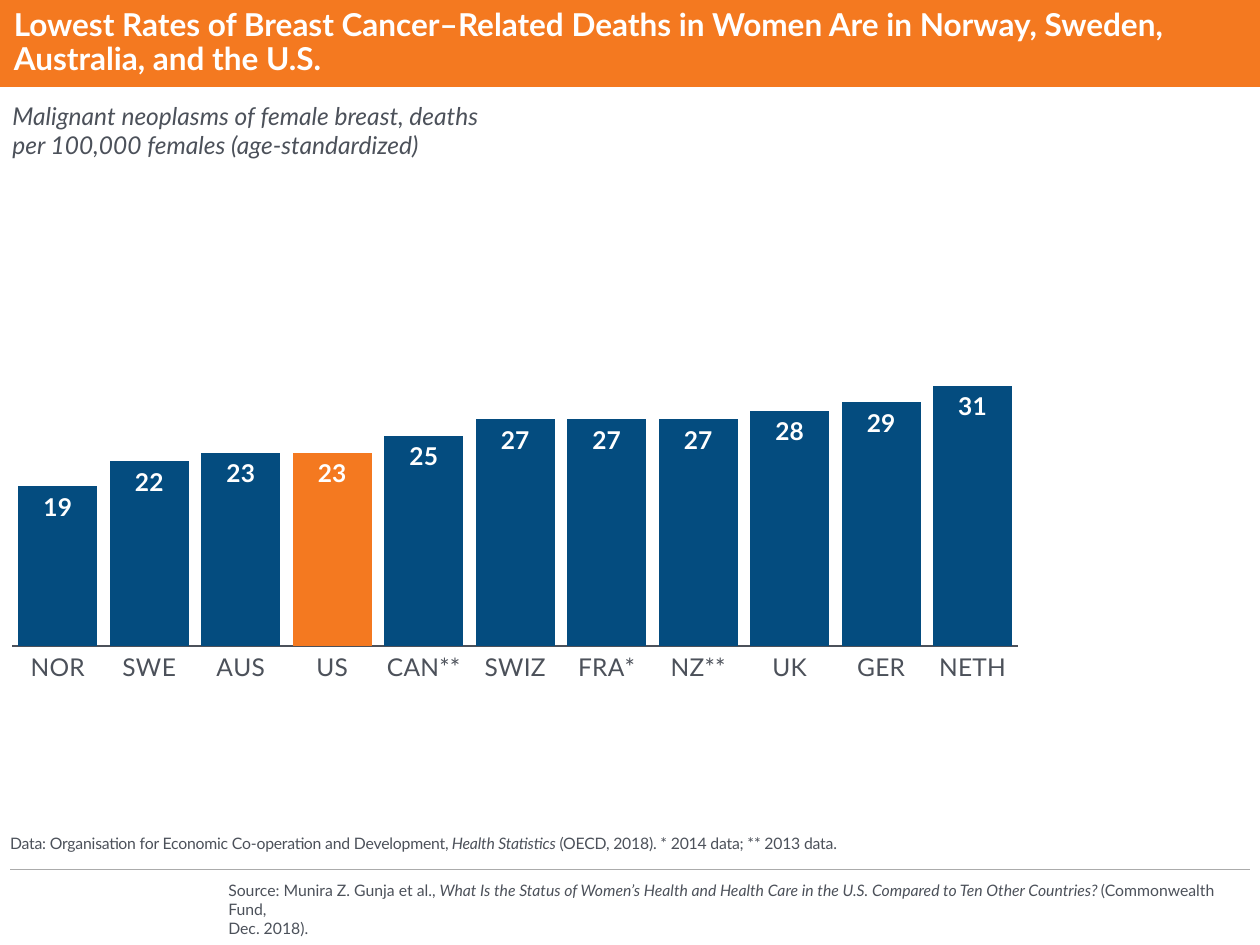
import pptx
import pptx.chart.data
import pptx.dml.color
import pptx.enum.chart
import pptx.enum.shapes
import pptx.enum.text
import pptx.oxml
import pptx.util
from lxml import etree

FONT = "Lato"
ORANGE, BLUE, GREY, RULE_GREY, WHITE = "F47920", "044C7F", "4C515A", "ABABAB", "FFFFFF"
WIDTH, HEIGHT = pptx.util.Inches(10), pptx.util.Inches(7.5)
COLUMN, ROW = WIDTH / 100, HEIGHT / 75
ANCHOR = pptx.enum.text.MSO_ANCHOR
DEATH_RATES = {
    "NOR": 19, "SWE": 22, "AUS": 23, "US": 23, "CAN**": 25, "SWIZ": 27,
    "FRA*": 27, "NZ**": 27, "UK": 28, "GER": 29, "NETH": 31,
}


def rgb(code):
    """Turn a hex string into a colour."""
    return pptx.dml.color.RGBColor.from_string(code)


def grid(left, top, width, height):
    """Turn columns and rows of the slide grid into slide lengths."""
    return tuple(round(n * unit) for n, unit in
                 zip((left, top, width, height), (COLUMN, ROW, COLUMN, ROW)))


def style(font, size, color, bold=False, italic=False):
    """Set the look of a font."""
    font.name, font.size = FONT, pptx.util.Pt(size)
    font.bold, font.italic = bold, italic
    font.color.rgb = rgb(color)


def add_text(slide, box, pieces, size, color, anchor=ANCHOR.MIDDLE, bold=False, inset=0):
    """Place one paragraph of (text, italic) pieces and return its box and paragraph."""
    text_box = slide.shapes.add_textbox(*box)
    frame = text_box.text_frame
    frame.word_wrap = True
    frame.vertical_anchor = anchor
    frame.margin_left = frame.margin_right = pptx.util.Inches(inset)
    frame.margin_top = frame.margin_bottom = pptx.util.Inches(inset / 2)
    paragraph = frame.paragraphs[0]
    for text, italic in pieces:
        for number, line in enumerate(text.split("\n")):
            if number:
                paragraph.add_line_break()
            run = paragraph.add_run()
            run.text = line
            style(run.font, size, color, bold, italic)
    return text_box, paragraph


def add_title_band(slide, box):
    """Fill the box with the orange band and its headline."""
    left, top, width, height = box
    band = slide.shapes.add_shape(pptx.enum.shapes.MSO_SHAPE.RECTANGLE, *box)
    band.shadow.inherit = False
    band.fill.solid()
    band.fill.fore_color.rgb = rgb(ORANGE)
    band.line.fill.background()
    indent = round(width * 0.011)
    headline = ("Lowest Rates of Breast Cancer–Related Deaths in Women Are in "
                "Norway, Sweden, Australia, and the U.S.")
    _, paragraph = add_text(slide, (left + indent, top, round(width * 0.984), height),
                            [(headline, False)], 18, WHITE, bold=True)
    paragraph.line_spacing = 0.9


def add_measure(slide, box):
    """Name the measure that the chart shows."""
    measure = "Malignant neoplasms of female breast, deaths \nper 100,000 females (age-standardized)"
    text_box, _ = add_text(slide, box, [(measure, True)], 14, GREY, ANCHOR.TOP, inset=0.1)
    text_box.text_frame.auto_size = pptx.enum.text.MSO_AUTO_SIZE.SHAPE_TO_FIT_TEXT


def fix_plot_area(chart, **shares):
    """Pin the inner plot area to shares of the chart."""
    plot_area = chart._chartSpace.chart.plotArea
    for old in plot_area.findall(pptx.oxml.ns.qn("c:layout")):
        plot_area.remove(old)
    layout = etree.Element(pptx.oxml.ns.qn("c:layout"))
    manual = etree.SubElement(layout, pptx.oxml.ns.qn("c:manualLayout"))
    settings = {"layoutTarget": "inner", "xMode": "edge", "yMode": "edge", **shares}
    for tag, value in settings.items():
        etree.SubElement(manual, pptx.oxml.ns.qn(f"c:{tag}")).set("val", str(value))
    plot_area.insert(0, layout)


def add_death_chart(slide, box):
    """Chart the death rates by country with the US highlighted."""
    enums = pptx.enum.chart
    data = pptx.chart.data.CategoryChartData()
    data.categories = list(DEATH_RATES)
    data.add_series("Series 1", list(DEATH_RATES.values()))
    chart = slide.shapes.add_chart(enums.XL_CHART_TYPE.COLUMN_CLUSTERED, *box, data).chart
    chart.has_legend = chart.has_title = False
    style(chart.font, 10, GREY)
    fix_plot_area(chart, x=0.02, y=0.03, w=0.96, h=0.88)

    rates, countries = chart.value_axis, chart.category_axis
    rates.minimum_scale, rates.maximum_scale, rates.major_unit = 0, 50, 10
    rates.has_major_gridlines = rates.visible = False
    countries.major_tick_mark = enums.XL_TICK_MARK.NONE
    countries.format.line.color.rgb = rgb(GREY)
    countries.format.line.width = pptx.util.Pt(0.75)
    style(countries.tick_labels.font, 14, GREY)

    plot = chart.plots[0]
    plot.gap_width, plot.overlap, plot.vary_by_categories = 16, -27, False
    deaths = plot.series[0]
    deaths.invert_if_negative = False
    highlight = deaths.points[list(DEATH_RATES).index("US")]
    for bars, color in ((deaths, BLUE), (highlight, ORANGE)):
        bars.format.fill.solid()
        bars.format.fill.fore_color.rgb = rgb(color)
    labels = deaths.data_labels
    labels.show_value = True
    labels.number_format, labels.number_format_is_linked = "#,##0", False
    labels.position = enums.XL_LABEL_POSITION.INSIDE_END
    style(labels.font, 14, WHITE, bold=True)


def add_data_note(slide, box):
    """Write the note on the data along the bottom of the box."""
    pieces = [("Data: Organisation for Economic Co-operation and Development, ", False),
              ("Health Statistics", True),
              (" (OECD, 2018). * 2014 data; ** 2013 data.", False)]
    _, paragraph = add_text(slide, box, pieces, 9, GREY, ANCHOR.BOTTOM)
    paragraph.line_spacing = 0.9
    paragraph.space_after = pptx.util.Pt(6)
    for run in paragraph.runs:
        run.font._element.set("spc", "-10")


def add_source(slide, box):
    """Draw the rule on top of the box and the source at its right."""
    left, top, width, height = box
    rule = slide.shapes.add_connector(pptx.enum.shapes.MSO_CONNECTOR.STRAIGHT,
                                      left + width, top, left, top)
    rule.line.color.rgb = rgb(RULE_GREY)
    rule.line.width = pptx.util.Pt(0.75)
    etree.SubElement(rule._element.spPr, pptx.oxml.ns.qn("a:effectLst"))
    pieces = [("Source: Munira Z. Gunja et al., ", False),
              ("What Is the Status of Women’s Health and Health Care in the U.S. "
               "Compared to Ten Other Countries? ", True),
              ("(Commonwealth Fund, \nDec. 2018).", False)]
    indent, gap = round(width * 0.176), round(height / 6)
    add_text(slide, (left + indent, top + gap, width - indent, height - gap), pieces, 9, GREY)


def main():
    """Build the slide and save it."""
    deck = pptx.Presentation()
    deck.slide_width, deck.slide_height = WIDTH, HEIGHT
    slide = deck.slides.add_slide(deck.slide_layouts[6])
    add_title_band(slide, grid(0, 0, 100, 6.9))
    add_death_chart(slide, grid(-0.7, 16.8, 83.2, 37.9))
    add_measure(slide, grid(0, 7.5, 52, 5.7))
    add_data_note(slide, grid(0.8, 62.3, 98.4, 5.4))
    add_source(slide, grid(0.8, 69, 98.4, 5.4))
    deck.save("out.pptx")


if __name__ == "__main__":
    main()
